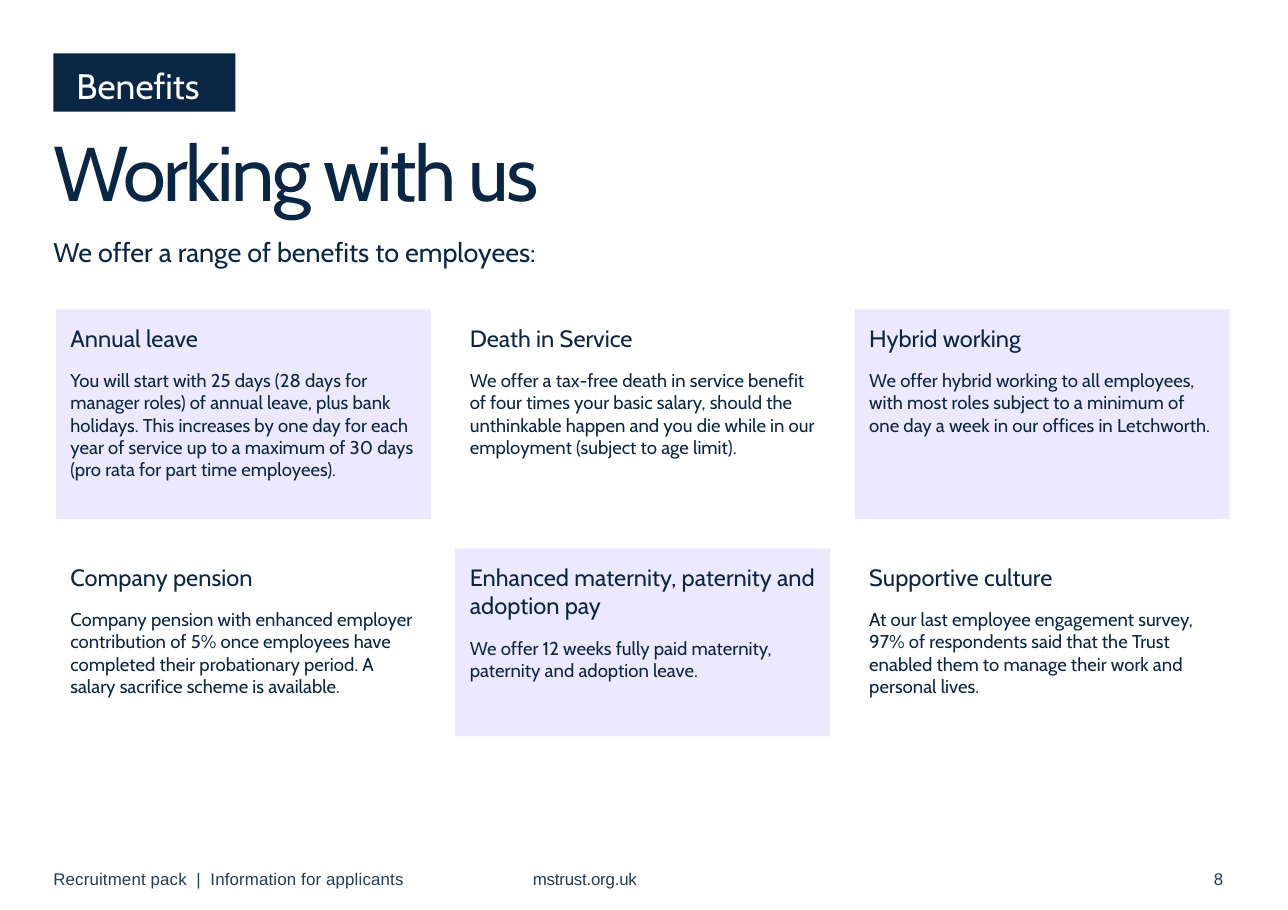
import pptx
import pptx.util
import pptx.dml.color
import pptx.enum.shapes
import pptx.enum.text

Inches, Pt = pptx.util.Inches, pptx.util.Pt
RGBColor = pptx.dml.color.RGBColor

NAVY = RGBColor(0x0A, 0x26, 0x45)
SLATE = RGBColor(0x23, 0x3C, 0x57)
LILAC = RGBColor(0xEC, 0xE8, 0xFD)
WHITE = RGBColor(0xFF, 0xFF, 0xFF)
HEADING_FONT, FOOTER_FONT = "Cabin", "Arial"

BENEFITS = [
    ("Annual leave",
     "You will start with 25 days (28 days for manager roles) of annual leave, plus bank "
     "holidays. This increases by one day for each year of service up to a maximum of "
     "30 days (pro rata for part time employees)."),
    ("Death in Service",
     "We offer a tax-free death in service benefit of four times your basic salary, should "
     "the unthinkable happen and you die while in our employment (subject to age limit)."),
    ("Hybrid working",
     "We offer hybrid working to all employees, with most roles subject to a minimum of "
     "one day a week in our offices in Letchworth."),
    ("Company pension",
     "Company pension with enhanced employer contribution of 5% once employees have "
     "completed their probationary period. A salary sacrifice scheme is available."),
    ("Enhanced maternity, paternity and adoption pay",
     "We offer 12 weeks fully paid maternity, paternity and adoption leave."),
    ("Supportive culture",
     "At our last employee engagement survey, 97% of respondents said that the Trust "
     "enabled them to manage their work and personal lives."),
]


def set_insets(frame, left=0, top=0, right=0, bottom=0):
    frame.word_wrap = True
    frame.margin_left, frame.margin_top = Inches(left), Inches(top)
    frame.margin_right, frame.margin_bottom = Inches(right), Inches(bottom)


def format_text(paragraph, size, color, font=HEADING_FONT, spacing=0):
    """Format every run; spacing is the letter spacing in points."""
    paragraph.alignment = pptx.enum.text.PP_ALIGN.LEFT
    for run in paragraph.runs:
        run.font.size, run.font.name = Pt(size), font
        run.font.color.rgb = color
        if spacing:
            run.font._element.set("spc", str(round(spacing * 100)))


def add_panel(slide, left, top, width, height, fill):
    panel = slide.shapes.add_shape(
        pptx.enum.shapes.MSO_SHAPE.RECTANGLE,
        Inches(left), Inches(top), Inches(width), Inches(height))
    panel.shadow.inherit = False
    panel.fill.solid()
    panel.fill.fore_color.rgb = fill
    panel.line.fill.background()
    return panel.text_frame


def add_line(slide, left, top, width, height, text, size, color, **style):
    frame = slide.shapes.add_textbox(
        Inches(left), Inches(top), Inches(width), Inches(height)).text_frame
    set_insets(frame)
    line = frame.paragraphs[0]
    line.text = text
    format_text(line, size, color, **style)
    return line


def add_header(slide, left, top, width):
    # Section badge
    badge = add_panel(slide, left, top, 1.5, 0.48, NAVY)
    set_insets(badge, left=0.19, top=0.05)
    badge.vertical_anchor = pptx.enum.text.MSO_ANCHOR.MIDDLE
    badge.text = "Benefits"
    format_text(badge.paragraphs[0], 21, WHITE)

    # Title and introduction
    title = add_line(slide, left, top + 0.67, width, 0.71,
                     "Working with us", 46, NAVY, spacing=-1.5)
    title.line_spacing = 0.9
    add_line(slide, left, top + 1.5, width, 0.27,
             "We offer a range of benefits to employees:", 16, NAVY)


def add_benefit(slide, left, top, width, height, fill, heading, details):
    card = add_panel(slide, left, top, width, height, fill)
    set_insets(card, 0.12, 0.12, 0.12, 0.12)
    card.vertical_anchor = pptx.enum.text.MSO_ANCHOR.TOP
    card.text = heading
    card.add_paragraph().text = details
    for paragraph, size in zip(card.paragraphs, (14, 11)):
        paragraph.space_after = Pt(10)
        format_text(paragraph, size, NAVY)


def add_benefits_grid(slide, left, top, width):
    columns, gap = 3, 0.2
    card_width = (width - gap * (columns - 1)) / columns
    row_tops, row_heights = (top, top + 1.97), (1.73, 1.55)
    for index, (heading, details) in enumerate(BENEFITS):
        row, column = divmod(index, columns)
        fill = WHITE if index % 2 else LILAC
        add_benefit(slide, left + column * (card_width + gap), row_tops[row],
                    card_width, row_heights[row], fill, heading, details)


def add_footer(slide, left, top, width):
    height = 0.21
    # Document name, with wider spacing around the divider
    document = add_line(slide, left, top, 3.2, height, "Recruitment pack", 10, SLATE)
    for part in (" |", " Information for applicants"):
        document.add_run().text = part
    format_text(document, 10, SLATE, font=FOOTER_FONT, spacing=0.1)
    document.runs[1].font._element.set("spc", "280")

    # Web address and page number
    add_line(slide, left + 3.95, top, 1.1, height, "mstrust.org.uk", 10, SLATE,
             font=FOOTER_FONT, spacing=-0.1)
    add_line(slide, left + width - 0.21, top, 0.21, height, "8", 10, SLATE,
             font=FOOTER_FONT, spacing=-0.2)


def main():
    deck = pptx.Presentation()
    deck.slide_width, deck.slide_height = Inches(10.61), Inches(7.5)
    slide = deck.slides.add_slide(deck.slide_layouts[6])
    add_header(slide, 0.44, 0.44, 6.8)
    add_benefits_grid(slide, 0.46, 2.55, 9.67)
    add_footer(slide, 0.44, 7.16, 9.77)
    deck.save("out.pptx")


if __name__ == "__main__":
    main()
